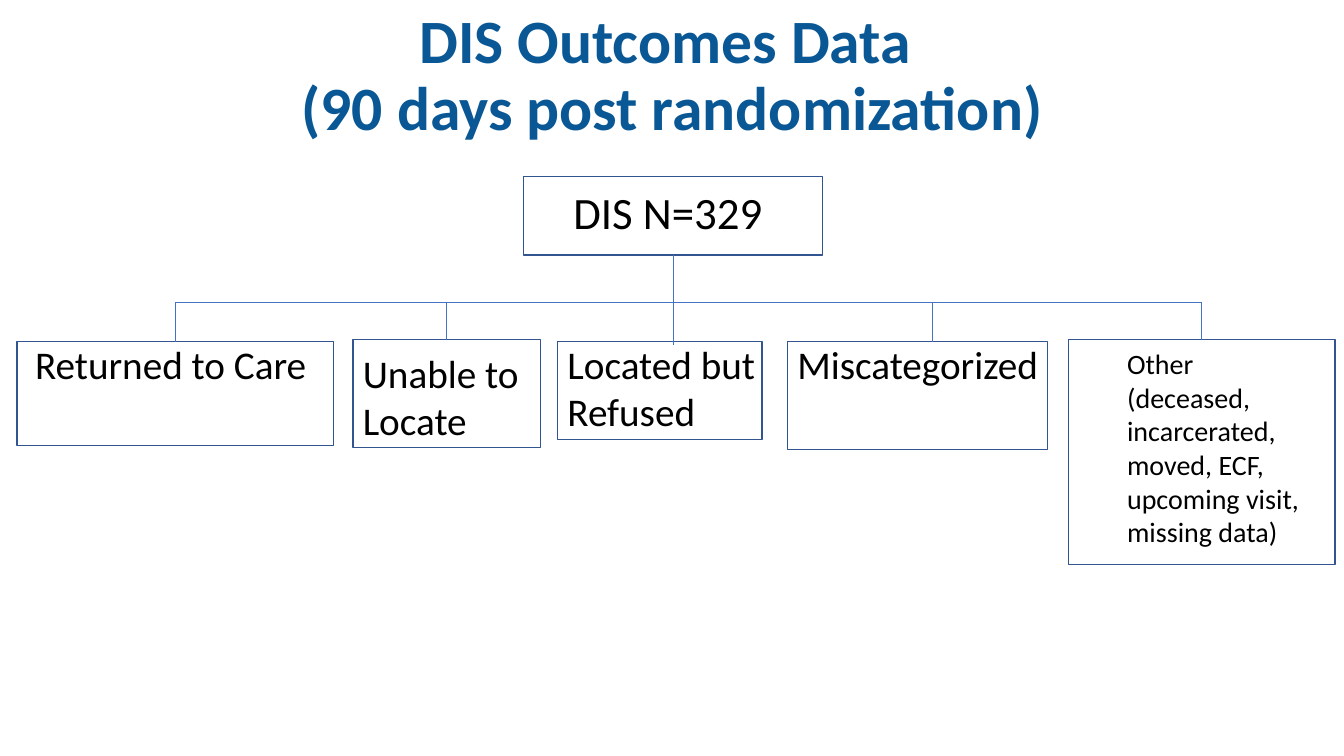
from pptx import Presentation, util as u
from pptx.dml.color import RGBColor
from pptx.enum import shapes, text
from pptx.oxml.ns import qn
from lxml import etree

COLORS = {"title": "095895", "body": "000000", "frame": "325491", "branch": "4472C4"}


class OutcomeSlide:
    """Holds the style and the current slide."""

    font = "Calibri"

    def __init__(self, deck):
        self.slide = deck.slides.add_slide(deck.slide_layouts[5])

    def color(self, name):
        return RGBColor.from_string(COLORS[name])

    def run(self, paragraph, words, size, color, bold=False):
        run = paragraph.add_run()
        run.text = words
        run.font.name, run.font.size, run.font.bold = self.font, u.Pt(size), bold
        run.font.color.rgb = self.color(color)

    def title(self, lines, area):
        heading = self.slide.shapes.title
        heading.left, heading.top, heading.width, heading.height = map(u.Inches, area)
        frame = heading.text_frame
        frame.word_wrap = True
        frame.auto_size = text.MSO_AUTO_SIZE.NONE
        frame.vertical_anchor = text.MSO_ANCHOR.MIDDLE
        paragraph = frame.paragraphs[0]
        paragraph.alignment = text.PP_ALIGN.CENTER
        paragraph.line_spacing = 0.9
        for number, line in enumerate(lines):
            if number:
                paragraph.add_line_break()
            self.run(paragraph, line, 44, "title", bold=True)

    def label(self, words, area, size, align=text.PP_ALIGN.LEFT):
        frame = self.slide.shapes.add_textbox(*map(u.Inches, area)).text_frame
        frame.word_wrap = True
        frame.auto_size = text.MSO_AUTO_SIZE.SHAPE_TO_FIT_TEXT
        paragraph = frame.paragraphs[0]
        paragraph.alignment = align
        self.run(paragraph, words, size, "body")

    def frame(self, area):
        outline = self.slide.shapes.add_shape(
            shapes.MSO_SHAPE.RECTANGLE, *map(u.Inches, area))
        outline.shadow.inherit = False
        outline.fill.background()
        outline.line.color.rgb = self.color("frame")
        outline.line.width = u.Pt(1)

    def line(self, x1, y1, x2, y2):
        branch = self.slide.shapes.add_connector(
            shapes.MSO_CONNECTOR.STRAIGHT, *map(u.Inches, (x1, y1, x2, y2)))
        branch.line.color.rgb = self.color("branch")
        branch.line.width = u.Pt(0.5)
        etree.SubElement(branch._element.spPr, qn("a:effectLst"))


# Outcome: words, size, label area, frame area, branch x, branch end
OUTCOMES = [
    ("Returned to Care", 28, (0.25, 3.33, 3.39, 0.57), (0.17, 3.39, 3.14, 1.03), 1.74, 3.39),
    ("Unable to Locate", 28, (3.5, 3.42, 2.19, 1.04), (3.5, 3.37, 1.86, 1.07), 4.43, 3.37),
    ("Located but Refused", 28, (5.53, 3.33, 2.31, 1.04), (5.53, 3.39, 2.03, 0.97), 6.68, 3.42),
    ("Miscategorized", 28, (7.81, 3.33, 2.89, 0.57), (7.81, 3.39, 2.58, 1.07), 9.25, 3.39),
    ("Other (deceased, incarcerated, moved, ECF, upcoming visit, missing data)", 20,
     (11.08, 3.39, 1.92, 2.12), (10.6, 3.37, 2.64, 2.23), 11.92, 3.37),
]
TRUNK_X, TRUNK_TOP, BAR_Y = 6.68, 2.53, 3


def main():
    deck = Presentation()
    deck.slide_width, deck.slide_height = u.Inches(13.33), u.Inches(7.5)
    chart = OutcomeSlide(deck)
    chart.title(["DIS Outcomes Data ", "(90 days post randomization)"],
                (0.92, 0.31, 11.5, 0.91))

    # Starting group
    chart.label("DIS N=329", (5.22, 1.78, 2.81, 0.64), 32, text.PP_ALIGN.CENTER)
    chart.frame((5.19, 1.75, 2.97, 0.78))

    # Trunk and crossbar
    chart.line(TRUNK_X, TRUNK_TOP, TRUNK_X, BAR_Y)
    chart.line(OUTCOMES[0][4], BAR_Y, OUTCOMES[-1][4], BAR_Y)

    # Outcomes with their branches
    for words, size, label_area, frame_area, branch_x, branch_end in OUTCOMES:
        chart.label(words, label_area, size)
        chart.frame(frame_area)
        chart.line(branch_x, BAR_Y, branch_x, branch_end)

    deck.save("out.pptx")


if __name__ == "__main__":
    main()
